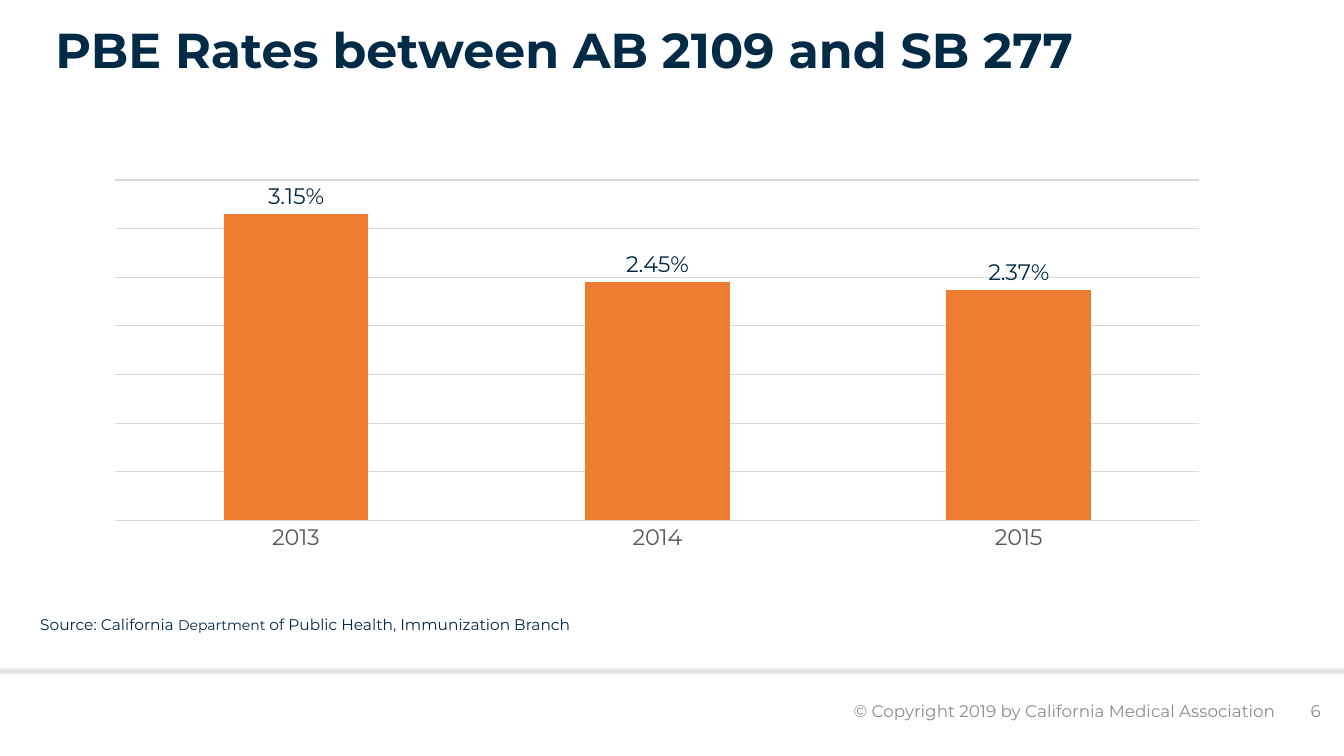
from pptx import Presentation
from pptx.chart.data import CategoryChartData
from pptx.dml.color import RGBColor
from pptx.enum.chart import XL_CHART_TYPE, XL_LABEL_POSITION, XL_TICK_MARK
from pptx.enum.shapes import MSO_SHAPE
from pptx.enum.text import MSO_ANCHOR, MSO_AUTO_SIZE, PP_ALIGN
from pptx.util import Inches, Pt

COLUMN = XL_CHART_TYPE.COLUMN_CLUSTERED
ABOVE = XL_LABEL_POSITION.OUTSIDE_END
NO_TICK = XL_TICK_MARK.NONE
RECT = MSO_SHAPE.RECTANGLE
TOP, MIDDLE = MSO_ANCHOR.TOP, MSO_ANCHOR.MIDDLE
LEFT, CENTER, RIGHT = PP_ALIGN.LEFT, PP_ALIGN.CENTER, PP_ALIGN.RIGHT
FIXED = MSO_AUTO_SIZE.NONE

NAVY = RGBColor(0x00, 0x2B, 0x47)
ORANGE = RGBColor(0xED, 0x7D, 0x31)
SLATE = RGBColor(0x59, 0x59, 0x59)
GRAY = RGBColor(0x8C, 0x8C, 0x8C)
GRID = RGBColor(0xD9, 0xD9, 0xD9)
PALE = RGBColor(0xE7, 0xE6, 0xE6)
FONT = "Montserrat"

RATES = {"2013": 0.0315, "2014": 0.0245, "2015": 0.0237}


def style(font, size, color, bold=False):
    """Set the face, size, color and weight of a font."""
    font.name = FONT
    font.size = Pt(size)
    font.bold = bold
    font.color.rgb = color


def write(frame, *runs, color=NAVY, bold=False, align=LEFT, anchor=TOP):
    """Fill a text frame with one paragraph of (words, size) runs."""
    frame.word_wrap = True
    frame.auto_size = FIXED
    frame.vertical_anchor = anchor
    para = frame.paragraphs[0]
    para.alignment = align
    for words, size in runs:
        run = para.add_run()
        run.text = words
        style(run.font, size, color, bold)


def add_box(slide, area, *runs, **form):
    """Add a text box at the given area in inches."""
    box = slide.shapes.add_textbox(*map(Inches, area))
    write(box.text_frame, *runs, **form)


def add_title(slide, words):
    """Place and format the title."""
    title = slide.shapes.title
    title.left, title.top = Inches(0.55), Inches(0.26)
    title.width, title.height = Inches(11.5), Inches(0.57)
    frame = title.text_frame
    write(frame, (words, 35), bold=True)
    frame.margin_left = frame.margin_right = frame.margin_top = 0
    frame.margin_bottom = Inches(0.05)
    frame.paragraphs[0].line_spacing = 0.9


def add_rule(slide):
    """Add the pale band above the footer."""
    band = slide.shapes.add_shape(
        RECT, Inches(-0.04), Inches(6.63), Inches(13.38), Inches(0.06))
    band.shadow.inherit = False
    band.fill.solid()
    band.fill.fore_color.rgb = PALE
    band.line.fill.background()


def draw_line(line):
    """Format an axis line or gridline."""
    line.color.rgb = GRID
    line.width = Pt(0.75)


def add_rates(slide):
    """Add the column chart of yearly rates."""
    data = CategoryChartData(number_format="0.00%")
    data.categories = list(RATES)
    data.add_series("Series 1", list(RATES.values()))
    area = map(Inches, (0.92, 1.71, 11.2, 3.83))
    chart = slide.shapes.add_chart(COLUMN, *area, data).chart
    chart.has_legend = False
    chart.has_title = False
    style(chart.font, 16, SLATE)

    years = chart.category_axis
    years.major_tick_mark = years.minor_tick_mark = NO_TICK
    style(years.tick_labels.font, 16, SLATE)
    draw_line(years.format.line)

    scale = chart.value_axis
    scale.visible = False
    scale.minimum_scale, scale.maximum_scale = 0, 0.035
    scale.major_unit = 0.005
    scale.has_major_gridlines = True
    draw_line(scale.major_gridlines.format.line)

    plot = chart.plots[0]
    plot.gap_width = 150
    plot.vary_by_categories = False
    fill = plot.series[0].format.fill
    fill.solid()
    fill.fore_color.rgb = ORANGE

    plot.has_data_labels = True
    labels = plot.data_labels
    labels.show_value = True
    labels.position = ABOVE
    labels.number_format = "0.00%"
    labels.number_format_is_linked = False
    style(labels.font, 16, NAVY)


def main():
    """Build and save the slide."""
    deck = Presentation()
    deck.slide_width, deck.slide_height = Inches(13.33), Inches(7.5)
    slide = deck.slides.add_slide(deck.slide_layouts[5])
    add_rule(slide)
    add_box(slide, (8.31, 6.85, 4.5, 0.4),
            ("© Copyright 2019 by California Medical Association", 12),
            color=GRAY, align=CENTER, anchor=MIDDLE)
    add_box(slide, (10.2, 6.85, 3, 0.4), ("6", 12),
            color=GRAY, align=RIGHT, anchor=MIDDLE)
    add_title(slide, "PBE Rates between AB 2109 and SB 277")
    add_rates(slide)
    add_box(slide, (0.3, 6.05, 6.67, 0.29),
            ("Source: California ", 11), ("Department", 10),
            (" of Public Health, Immunization Branch", 11))
    deck.save("out.pptx")


if __name__ == "__main__":
    main()
